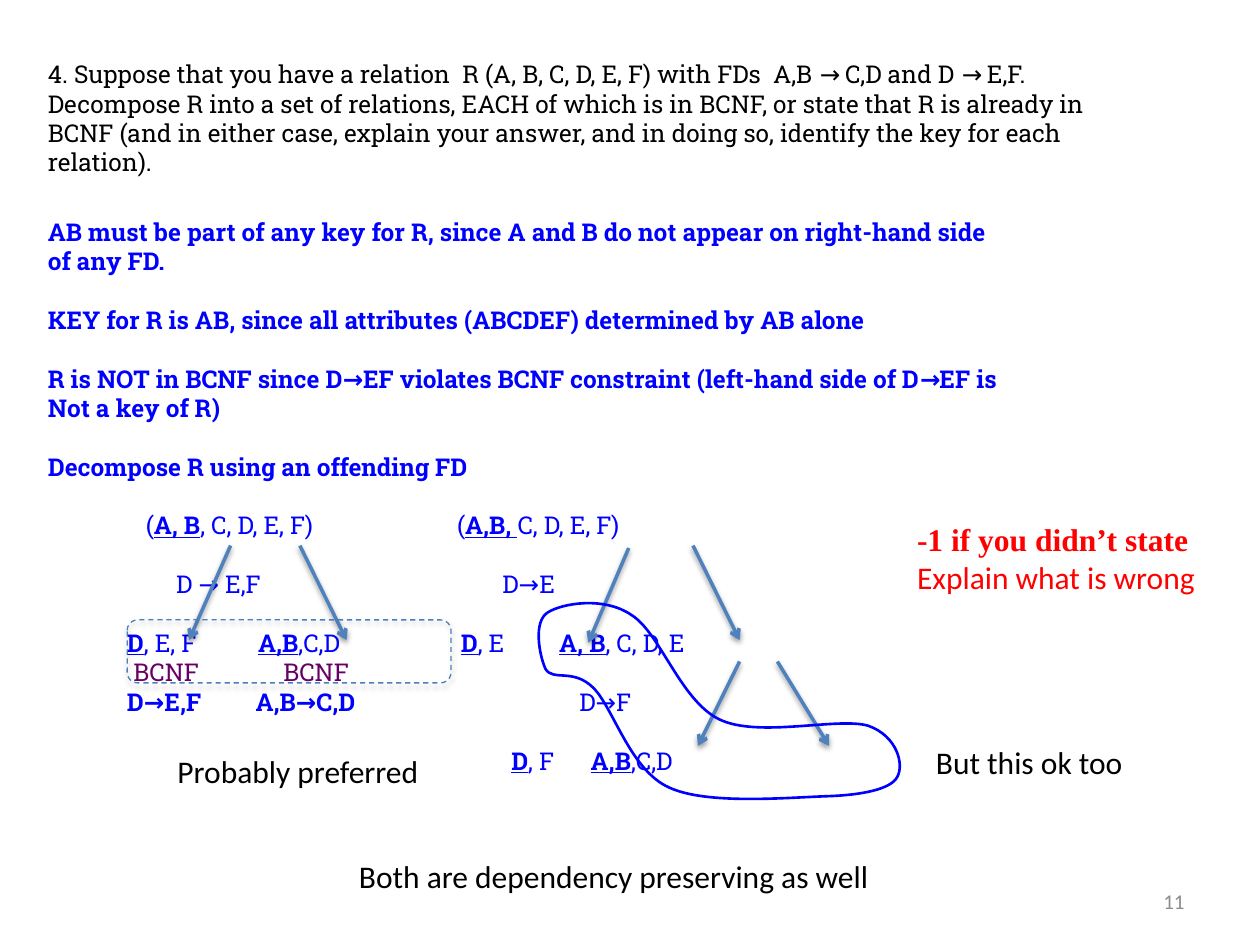
from typing import NamedTuple

from lxml import etree
from pptx import Presentation
from pptx.dml.color import RGBColor
from pptx.enum.dml import MSO_LINE
from pptx.enum.shapes import MSO_CONNECTOR, MSO_SHAPE
from pptx.enum.text import MSO_ANCHOR, MSO_AUTO_SIZE, PP_ALIGN
from pptx.oxml.ns import qn
from pptx.util import Inches, Pt

STRAIGHT = MSO_CONNECTOR.STRAIGHT
ROUNDED = MSO_SHAPE.ROUNDED_RECTANGLE
DASH = MSO_LINE.DASH
TOP, MIDDLE = MSO_ANCHOR.TOP, MSO_ANCHOR.MIDDLE
LEFT, RIGHT = PP_ALIGN.LEFT, PP_ALIGN.RIGHT
NO_FIT = MSO_AUTO_SIZE.NONE

BLACK, BLUE, PURPLE, RED, GRAY = "000000", "0000FF", "660066", "FF0000", "8C8C8C"
LINE_GAP = 16.8
SLAB = {"size": Pt(14), "name": "Roboto Slab", "bold": False}
NOTE = {"size": Pt(18), "name": "Calibri", "bold": False}
NUMBER = {**NOTE, "size": Pt(12)}
WARNING = {**NOTE, "name": "Times New Roman", "bold": True}
BOLD = {**SLAB, "bold": True}
KEY = {**BOLD, "underline": True}


class Run(NamedTuple):
    text: str
    fmt: dict
    color: str = BLUE


class Para(NamedTuple):
    runs: list[Run]
    gap: float = 0
    tabs: tuple[float, ...] = ()


class Box(NamedTuple):
    left: float
    top: float
    width: float
    height: float


class Arrow(NamedTuple):
    x1: float
    y1: float
    x2: float
    y2: float


QUESTION = [
    "4. Suppose that you have a relation  R (A, B, C, D, E, F) with FDs  A,B → C,D and D → E,F.",
    "Decompose R into a set of relations, EACH of which is in BCNF, or state that R is already in",
    "BCNF (and in either case, explain your answer, and in doing so, identify the key for each",
    "relation).",
]
REASONING = [
    ("AB must be part of any key for R, since A and B do not appear on right-hand side", 0),
    ("of any FD.", 0),
    ("KEY for R is AB, since all attributes (ABCDEF) determined by AB alone", LINE_GAP),
    ("R is NOT in BCNF since D→EF violates BCNF constraint (left-hand side of D→EF is", LINE_GAP),
    ("Not a key of R)", 0),
    ("Decompose R using an offending FD", LINE_GAP),
]
DECOMPOSITION = [
    Para([Run("\t(", SLAB), Run("A, B", KEY), Run(", C, D, E, F)\t(", SLAB),
          Run("A,B, ", KEY), Run("C, D, E, F)", SLAB)], 0, (0.78, 3.25)),
    Para([Run("\tD → E,F\tD→E", SLAB)], LINE_GAP, (1.02, 3.61)),
    Para([Run("\t", SLAB), Run("D", KEY), Run(", E, F\t", SLAB), Run("A,B", KEY),
          Run(",C,D\t", SLAB), Run("D", KEY), Run(", E\t", SLAB), Run("A, B", KEY),
          Run(", C, D, E", SLAB)], LINE_GAP, (0.63, 1.67, 3.28, 4.06)),
    Para([Run("\tBCNF\tBCNF", SLAB, PURPLE)], 0, (0.68, 1.87)),
    Para([Run("\tD→E,F\tA,B→C,D\t", BOLD), Run("D→F", SLAB)], 0, (0.63, 1.65, 4.22)),
    Para([Run("\t", SLAB), Run("D", KEY), Run(", F\t", SLAB), Run("A,B", KEY),
          Run(",C,D", SLAB)], LINE_GAP, (3.68, 4.31)),
]
ARROWS = [
    Arrow(1.83, 4.33, 1.5, 5.08),
    Arrow(2.38, 4.33, 2.75, 5.08),
    Arrow(4.99, 4.35, 4.67, 5.1),
    Arrow(5.5, 4.33, 5.87, 5.08),
    Arrow(5.87, 5.25, 5.54, 5.92),
    Arrow(6.17, 5.25, 6.58, 5.92),
]
NOTES = [
    (Box(1.31, 5.92, 2.15, 0.4), [Run("Probably preferred", NOTE, BLACK)]),
    (Box(7.33, 5.85, 1.7, 0.4), [Run("But this ok too", NOTE, BLACK)]),
    (Box(2.75, 6.75, 4.29, 0.4), [Run("Both are dependency preserving as well", NOTE, BLACK)]),
    (Box(7.18, 4.08, 2.44, 0.71), [Run("-1 if you didn’t state", WARNING, RED),
                                   Run("Explain what is wrong", NOTE, RED)]),
]
LOOP_BOX = Box(4.28, 4.79, 2.87, 1.56)
LOOP_START = (4.35, 4.86)
LOOP_CURVES = [
    ((4.46, 4.79), (4.79, 4.73), (5.01, 4.88)),
    ((5.24, 5.02), (5.4, 5.56), (5.71, 5.71)),
    ((6.02, 5.86), (6.65, 5.69), (6.89, 5.76)),
    ((7.12, 5.84), (7.18, 6.07), (7.12, 6.17)),
    ((7.07, 6.26), (6.86, 6.31), (6.56, 6.32)),
    ((6.25, 6.33), (5.61, 6.39), (5.31, 6.25)),
    ((5, 6.11), (4.87, 5.62), (4.71, 5.46)),
    ((4.55, 5.3), (4.39, 5.41), (4.33, 5.31)),
    ((4.28, 5.2), (4.23, 4.93), LOOP_START),
]


def rgb(color: str) -> RGBColor:
    return RGBColor.from_string(color)


def place(sp, box: Box) -> None:
    for name, value in box._asdict().items():
        setattr(sp, name, Inches(value))


def write(tf, paras: list[Para], wrap: bool = True, anchor=TOP, align=LEFT) -> None:
    frame_format = {"word_wrap": wrap, "auto_size": NO_FIT, "vertical_anchor": anchor}
    for name, value in frame_format.items():
        setattr(tf, name, value)
    for i, para in enumerate(paras):
        p = tf.add_paragraph() if i else tf.paragraphs[0]
        p.alignment = align
        p.space_before = Pt(para.gap)
        if para.tabs:
            tabs = etree.SubElement(p._p.get_or_add_pPr(), qn("a:tabLst"))
            for pos in para.tabs:
                etree.SubElement(tabs, qn("a:tab"), pos=str(Inches(pos)), algn="l")
        for run in para.runs:
            r = p.add_run()
            r.text = run.text
            for name, value in run.fmt.items():
                setattr(r.font, name, value)
            r.font.color.rgb = rgb(run.color)


def fill_placeholder(sp, box: Box, paras: list[Para]) -> None:
    place(sp, box)
    write(sp.text_frame, paras)
    for p in sp.text_frame.paragraphs:
        pPr = p._p.get_or_add_pPr()
        pPr.set("marL", "0")
        pPr.set("indent", "0")
        etree.SubElement(pPr, qn("a:buNone"))


def add_text(s, box: Box, paras: list[Para], **options) -> None:
    sp = s.shapes.add_textbox(*map(Inches, box))
    write(sp.text_frame, paras, **options)


def outline(sp, color: str, width: float) -> None:
    sp.line.color.rgb = rgb(color)
    sp.line.width = Pt(width)


def add_shadow(spPr, alpha: int, dist: float) -> None:
    effects = etree.SubElement(spPr, qn("a:effectLst"))
    shadow = etree.SubElement(effects, qn("a:outerShdw"), blurRad=str(Pt(3.1)),
                              dist=str(Pt(dist)), dir="5400000", rotWithShape="0")
    color = etree.SubElement(shadow, qn("a:srgbClr"), val=BLACK)
    etree.SubElement(color, qn("a:alpha"), val=str(alpha * 1000))


def add_arrow(s, arrow: Arrow) -> None:
    sp = s.shapes.add_connector(STRAIGHT, *map(Inches, arrow))
    outline(sp, "4F81BD", 2)
    etree.SubElement(sp.line._get_or_add_ln(), qn("a:tailEnd"), type="arrow")
    add_shadow(sp._element.spPr, 38, 1.6)


def add_frame(s, box: Box) -> None:
    sp = s.shapes.add_shape(ROUNDED, *map(Inches, box))
    sp.fill.background()
    outline(sp, "4B7EBC", 0.75)
    sp.line.dash_style = DASH
    add_shadow(sp._element.spPr, 35, 1.8)


def add_loop(s, box: Box, start: tuple, curves: list[tuple]) -> None:
    builder = s.shapes.build_freeform(*map(Inches, start))
    builder.add_line_segments([tuple(map(Inches, curve[-1])) for curve in curves], close=True)
    sp = builder.convert_to_shape()
    place(sp, box)
    outlines = next(sp._element.iter(qn("a:path")))
    outlines.set("w", str(Inches(box.width)))
    outlines.set("h", str(Inches(box.height)))
    for child in list(outlines):
        outlines.remove(child)
    steps = [("a:moveTo", (start,))] + [("a:cubicBezTo", curve) for curve in curves]
    for tag, points in steps:
        step = etree.SubElement(outlines, qn(tag))
        for x, y in points:
            etree.SubElement(step, qn("a:pt"), x=str(Inches(x - box.left)),
                             y=str(Inches(y - box.top)))
    etree.SubElement(outlines, qn("a:close"))
    sp.shadow.inherit = False
    sp.fill.background()
    outline(sp, BLUE, 1.5)


def main() -> None:
    prs = Presentation()
    prs.slide_width, prs.slide_height = Inches(10), Inches(7.5)
    s = prs.slides.add_slide(prs.slide_layouts[1])
    title, body = s.placeholders
    fill_placeholder(title, Box(0.28, 0.42, 9.01, 1.04),
                     [Para([Run(line, SLAB, BLACK)]) for line in QUESTION])
    fill_placeholder(body, Box(0.28, 1.67, 8.64, 2.33),
                     [Para([Run(line, BOLD)], gap) for line, gap in REASONING])
    add_text(s, Box(0.28, 4, 8.64, 2.25), DECOMPOSITION)
    add_text(s, Box(7.17, 6.95, 2.33, 0.4), [Para([Run("11", NUMBER, GRAY)])],
             anchor=MIDDLE, align=RIGHT)
    for arrow in ARROWS:
        add_arrow(s, arrow)
    add_frame(s, Box(1.01, 4.92, 2.57, 0.5))
    add_loop(s, LOOP_BOX, LOOP_START, LOOP_CURVES)
    for box, runs in NOTES:
        add_text(s, box, [Para([run]) for run in runs], wrap=False)
    prs.save("out.pptx")


if __name__ == "__main__":
    main()
